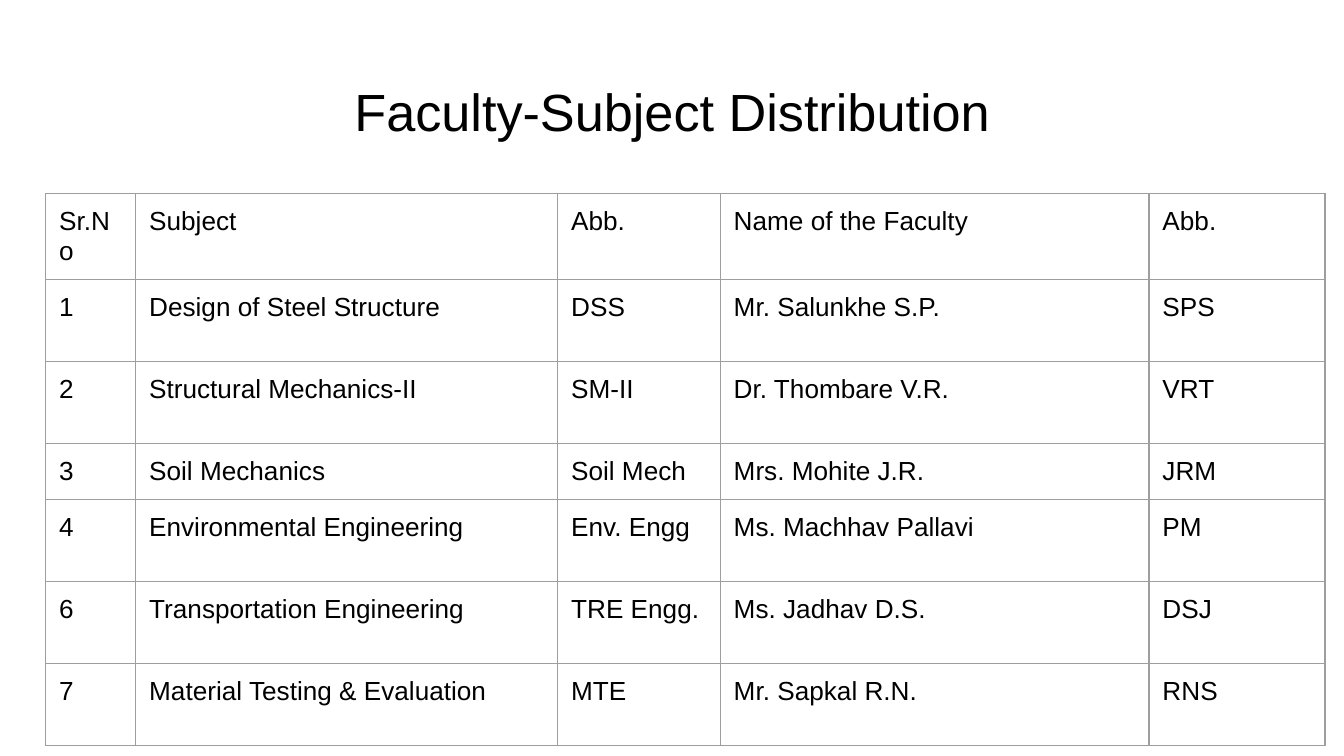
from lxml.etree import SubElement
from pptx import Presentation
from pptx.dml.color import RGBColor
from pptx.enum.text import MSO_ANCHOR, PP_ALIGN
from pptx.oxml.ns import qn
from pptx.util import Inches, Pt

FONT = "Arial"
BLACK = "000000"
WHITE = "FFFFFF"
GRID = "9E9E9E"

COLUMN_WIDTHS = [0.67, 3.14, 1.21, 3.19, 1.31]
ROW_HEIGHTS = [0.61, 0.61, 0.61, 0.4, 0.61, 0.61, 0.61]
ROWS = [
    ["Sr.No", "Subject", "Abb.", "Name of the Faculty", "Abb."],
    ["1", "Design of Steel Structure", "DSS", "Mr. Salunkhe S.P.", "SPS"],
    ["2", "Structural Mechanics-II", "SM-II", "Dr. Thombare V.R.", "VRT"],
    ["3", "Soil Mechanics", "Soil Mech", "Mrs. Mohite J.R.", "JRM"],
    ["4", "Environmental Engineering", "Env. Engg", "Ms. Machhav Pallavi", "PM"],
    ["6", "Transportation Engineering", "TRE Engg.", "Ms. Jadhav D.S.", "DSJ"],
    ["7", "Material Testing & Evaluation", "MTE", "Mr. Sapkal R.N.", "RNS"],
]


def rgb(color):
    return RGBColor.from_string(color)


def add_run(p, text, size):
    r = p.add_run()
    r.text = text
    r.font.name = FONT
    r.font.size = Pt(size)
    r.font.color.rgb = rgb(BLACK)


def set_margins(box):
    """Give a text frame or a table cell equal margins."""
    box.margin_left = box.margin_right = Inches(0.1)
    box.margin_top = box.margin_bottom = Inches(0.1)


def set_borders(cell, color, width):
    tc_pr = cell._tc.get_or_add_tcPr()
    for i, side in enumerate(("a:lnL", "a:lnR", "a:lnT", "a:lnB")):
        ln = tc_pr.makeelement(qn(side), {"w": str(Pt(width))})
        fill = SubElement(ln, qn("a:solidFill"))
        SubElement(fill, qn("a:srgbClr"), val=color)
        tc_pr.insert(i, ln)  # borders come before the cell fill


def add_title(s, text):
    sp = s.shapes.title
    sp.left, sp.top = Inches(0.34), Inches(0.49)
    sp.width, sp.height = Inches(9.32), Inches(0.63)
    tf = sp.text_frame
    tf.word_wrap = True
    tf.vertical_anchor = MSO_ANCHOR.TOP
    set_margins(tf)
    p = tf.paragraphs[0]
    p.alignment = PP_ALIGN.CENTER
    add_run(p, text, 28)


def add_faculty_table(s):
    frame = s.shapes.add_table(
        len(ROWS), len(COLUMN_WIDTHS), Inches(0.34), Inches(1.44),
        Inches(sum(COLUMN_WIDTHS)), Inches(sum(ROW_HEIGHTS)))
    table = frame.table
    table.first_row = table.horz_banding = False
    for column, width in zip(table.columns, COLUMN_WIDTHS):
        column.width = Inches(width)
    for row, height, texts in zip(table.rows, ROW_HEIGHTS, ROWS):
        row.height = Inches(height)
        for cell, text in zip(row.cells, texts):
            cell.fill.background()
            set_margins(cell)
            set_borders(cell, GRID, 0.75)
            add_run(cell.text_frame.paragraphs[0], text, 14)


def main():
    prs = Presentation()
    # Widescreen, 16:9
    prs.slide_width = Inches(10)
    prs.slide_height = prs.slide_width * 9 // 16
    s = prs.slides.add_slide(prs.slide_layouts[5])
    s.background.fill.solid()
    s.background.fill.fore_color.rgb = rgb(WHITE)

    # Heading
    add_title(s, "Faculty-Subject Distribution")
    # Subjects with the staff who teach them
    add_faculty_table(s)

    prs.save("out.pptx")


if __name__ == "__main__":
    main()
